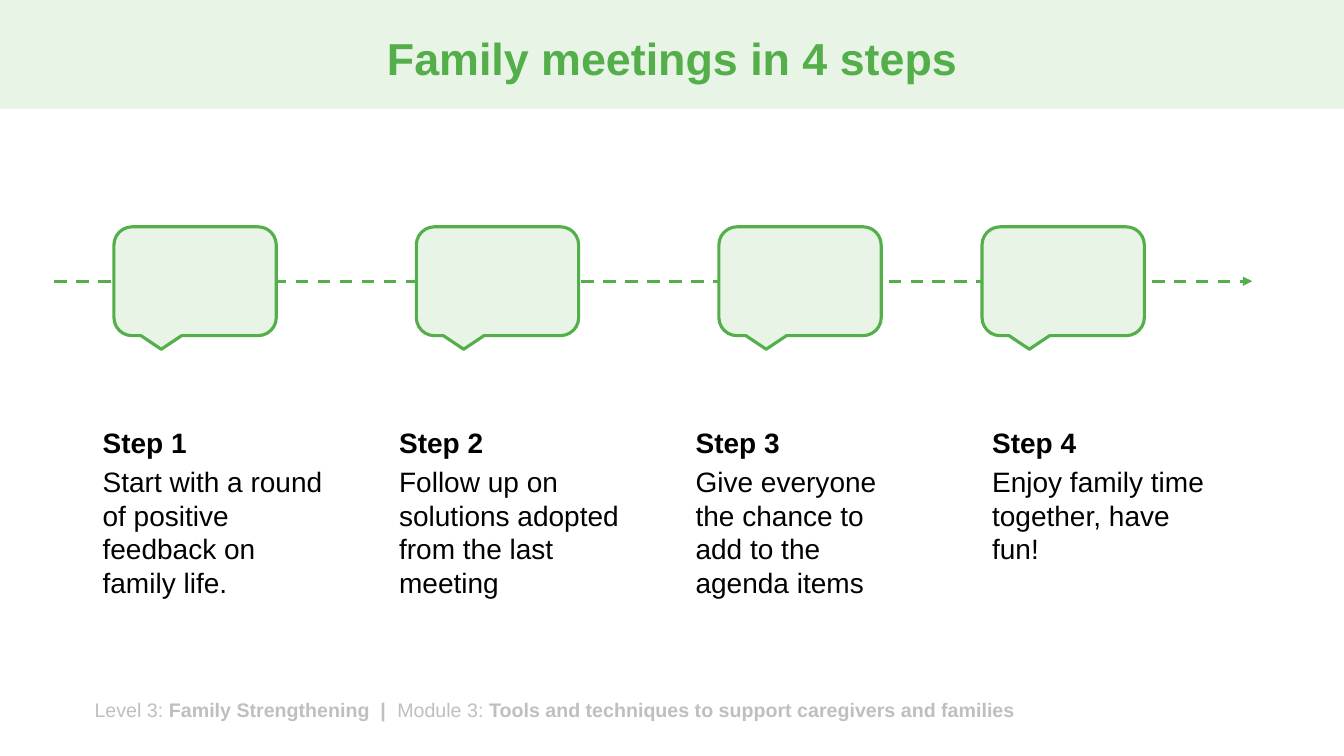
from lxml.etree import SubElement
from pptx import Presentation
from pptx.dml.color import RGBColor
from pptx.enum.dml import MSO_LINE_DASH_STYLE as Dash
from pptx.enum.shapes import MSO_CONNECTOR as Connector, MSO_SHAPE as Shape
from pptx.enum.text import MSO_ANCHOR as Anchor, MSO_AUTO_SIZE as AutoSize, PP_ALIGN as Align
from pptx.oxml.ns import qn
from pptx.util import Inches, Pt

GREEN = RGBColor(0x54, 0xAF, 0x4B)
PALE_GREEN = RGBColor(0xE8, 0xF4, 0xE6)
GREY = RGBColor(0xBF, 0xBF, 0xBF)
BLACK = RGBColor(0, 0, 0)

WIDTH, HEIGHT = Inches(13.33), Inches(7.5)
TITLE_ONLY = 5

# Places and sizes below are percentages of the slide's width and height.
STEP_LEFT, STEP_PITCH = 6.9, 22.06
BUBBLE_LEFTS = (8.48, 30.98, 53.49, 73.07)
TIMELINE_Y = 37.2

TITLE_FONT = {"name": "Arial", "size": Pt(32), "bold": True}
STEP_FONT = {"name": "Arial", "size": Pt(20)}
FOOTER_FONT = {"name": "Arial", "size": Pt(14)}

STEPS = [
    ("Start with a round of positive feedback on family life.", 24.67),
    ("Follow up on solutions adopted from the last meeting", 24.67),
    ("Give everyone the chance to add to the agenda items", 24.67),
    ("Enjoy family time together, have fun!", 20.13),
]
FOOTER = [
    ("Level 3: ", False),
    ("Family Strengthening  |  ", True),
    ("Module 3: ", False),
    ("Tools and techniques to support caregivers and families", True),
]


def across(share):
    return round(WIDTH * share / 100)


def down(share):
    return round(HEIGHT * share / 100)


def area(left, top, width, height):
    """Turn percentages of the slide into a left, top, width, height tuple."""
    return across(left), down(top), across(width), down(height)


def add_run(paragraph, text, formats, color, bold):
    run = paragraph.add_run()
    run.text = text
    for attribute, value in {**formats, "bold": bold}.items():
        setattr(run.font, attribute, value)
    run.font.color.rgb = color


def add_text_frame(slide, place):
    frame = slide.shapes.add_textbox(*place).text_frame
    frame.word_wrap = True
    frame.auto_size = AutoSize.SHAPE_TO_FIT_TEXT
    return frame


def add_filled_shape(slide, kind, place):
    shape = slide.shapes.add_shape(kind, *place)
    shape.shadow.inherit = False
    shape.fill.solid()
    shape.fill.fore_color.rgb = PALE_GREEN
    return shape


def outline_green(line):
    line.color.rgb = GREEN
    line.width = Pt(2.25)


def add_heading(slide, text):
    heading = slide.shapes.title
    band = add_filled_shape(slide, Shape.RECTANGLE, area(0, 0, 100, 14.4))
    band.line.fill.background()
    heading.element.addprevious(band.element)

    place = area(6.9, 1.73, 86.27, 12.67)
    for attribute, value in zip(("left", "top", "width", "height"), place):
        setattr(heading, attribute, value)
    heading.text_frame.vertical_anchor = Anchor.MIDDLE
    heading.text_frame.auto_size = AutoSize.NONE
    paragraph = heading.text_frame.paragraphs[0]
    paragraph.alignment = Align.CENTER
    paragraph.line_spacing = 0.9
    add_run(paragraph, text, TITLE_FONT, GREEN, True)


def add_timeline(slide):
    y = down(TIMELINE_Y)
    timeline = slide.shapes.add_connector(
        Connector.STRAIGHT, across(4.05), y, across(93.17), y)
    outline_green(timeline.line)
    timeline.line.dash_style = Dash.DASH
    SubElement(timeline.line._get_or_add_ln(), qn("a:tailEnd"), type="triangle")
    SubElement(timeline.element.spPr, qn("a:effectLst"))


def add_bubble(slide, left):
    place = area(left, TIMELINE_Y - 7.2, 12.08, 14.4)
    bubble = add_filled_shape(slide, Shape.ROUNDED_RECTANGULAR_CALLOUT, place)
    outline_green(bubble.line)


def add_step(slide, index, text, height):
    left = STEP_LEFT + index * STEP_PITCH
    frame = add_text_frame(slide, area(left, 55.6, 18, height))
    label, body = frame.paragraphs[0], frame.add_paragraph()
    for paragraph in (label, body):
        paragraph.space_before = Pt(4)
    add_run(label, f"Step {index + 1}", STEP_FONT, BLACK, True)
    add_run(body, text, STEP_FONT, BLACK, False)


def add_footer(slide):
    frame = add_text_frame(slide, area(6.3, 91.6, 79.67, 4.53))
    for text, bold in FOOTER:
        add_run(frame.paragraphs[0], text, FOOTER_FONT, GREY, bold)


def main():
    deck = Presentation()
    deck.slide_width, deck.slide_height = WIDTH, HEIGHT
    slide = deck.slides.add_slide(deck.slide_layouts[TITLE_ONLY])

    add_heading(slide, "Family meetings in 4 steps")
    add_footer(slide)
    for index, (text, height) in enumerate(STEPS):
        add_step(slide, index, text, height)
    add_timeline(slide)
    for left in BUBBLE_LEFTS:
        add_bubble(slide, left)

    deck.save("out.pptx")


if __name__ == "__main__":
    main()
